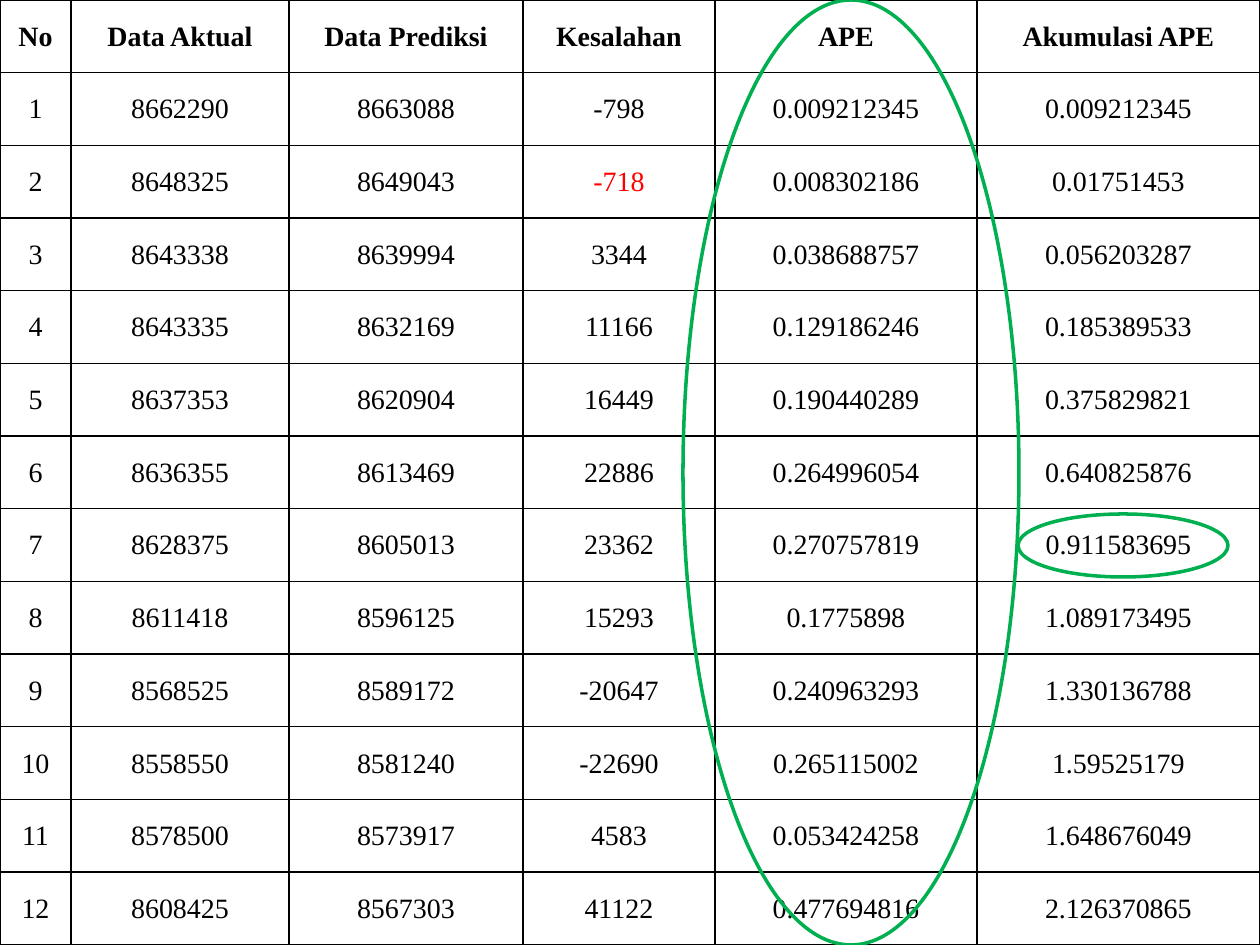
from dataclasses import dataclass

from lxml.etree import SubElement
from pptx import Presentation
from pptx.dml.color import RGBColor
from pptx.enum.shapes import MSO_SHAPE as Shape
from pptx.enum.text import MSO_ANCHOR as Anchor, PP_ALIGN as Align
from pptx.oxml.ns import qn
from pptx.util import Emu, Pt

PX = 914400 / 126
SLIDE_WIDTH, SLIDE_HEIGHT = 1260, 945


@dataclass(frozen=True)
class Theme:
    font: str = "Times New Roman"
    text_size: int = 16
    text: str = "000000"
    negative: str = "FF0000"
    border: str = "000000"
    border_width: int = 1
    highlight: str = "00B050"
    highlight_width: int = 2


THEME = Theme()
COLUMN_WIDTHS = [71, 218, 234, 192, 262, 283]
HEADERS = ["No", "Data Aktual", "Data Prediksi", "Kesalahan", "APE", "Akumulasi APE"]
FORECASTS = [
    ("8662290", "8663088", "-798", "0.009212345", "0.009212345"),
    ("8648325", "8649043", "-718", "0.008302186", "0.01751453"),
    ("8643338", "8639994", "3344", "0.038688757", "0.056203287"),
    ("8643335", "8632169", "11166", "0.129186246", "0.185389533"),
    ("8637353", "8620904", "16449", "0.190440289", "0.375829821"),
    ("8636355", "8613469", "22886", "0.264996054", "0.640825876"),
    ("8628375", "8605013", "23362", "0.270757819", "0.911583695"),
    ("8611418", "8596125", "15293", "0.1775898", "1.089173495"),
    ("8568525", "8589172", "-20647", "0.240963293", "1.330136788"),
    ("8558550", "8581240", "-22690", "0.265115002", "1.59525179"),
    ("8578500", "8573917", "4583", "0.053424258", "1.648676049"),
    ("8608425", "8567303", "41122", "0.477694816", "2.126370865"),
]
RED_CELL = (2, 3)
APE_COLUMN_RING = (683, 0, 336, 945)
ACCUMULATED_RING = (1018, 514, 210, 63)


def px(length):
    return Emu(round(length * PX))


def add_borders(cell):
    properties = cell._tc.get_or_add_tcPr()
    for position, side in enumerate(("lnL", "lnR", "lnT", "lnB")):
        line = SubElement(properties, qn(f"a:{side}"), w=str(Pt(THEME.border_width)))
        fill = SubElement(line, qn("a:solidFill"))
        SubElement(fill, qn("a:srgbClr"), val=THEME.border)
        properties.insert(position, line)


def fill_cell(cell, text, color, bold):
    cell.fill.background()
    cell.vertical_anchor = Anchor.MIDDLE
    cell.margin_left = cell.margin_right = cell.margin_top = px(1)
    cell.margin_bottom = 0
    cell.text_frame.text = text
    paragraph = cell.text_frame.paragraphs[0]
    paragraph.alignment = Align.CENTER
    font = paragraph.runs[0].font
    font.name = THEME.font
    font.size = Pt(THEME.text_size)
    font.bold = bold
    font.color.rgb = RGBColor.from_string(color)
    add_borders(cell)


def add_forecast_table(slide):
    rows = [HEADERS]
    rows += [(str(number), *values) for number, values in enumerate(FORECASTS, 1)]
    table = slide.shapes.add_table(
        len(rows), len(HEADERS), 0, 0, px(SLIDE_WIDTH), px(SLIDE_HEIGHT)
    ).table
    table.first_row = table.horz_banding = False
    for column, width in zip(table.columns, COLUMN_WIDTHS):
        column.width = px(width)
    for row_index, values in enumerate(rows):
        for column_index, text in enumerate(values):
            is_red = (row_index, column_index) == RED_CELL
            color = THEME.negative if is_red else THEME.text
            fill_cell(table.cell(row_index, column_index), text, color, row_index == 0)


def add_ring(slide, bounds):
    shape = slide.shapes.add_shape(Shape.OVAL, *map(px, bounds))
    shape.shadow.inherit = False
    shape.fill.background()
    shape.line.color.rgb = RGBColor.from_string(THEME.highlight)
    shape.line.width = Pt(THEME.highlight_width)


def main():
    presentation = Presentation()
    presentation.slide_width = px(SLIDE_WIDTH)
    presentation.slide_height = px(SLIDE_HEIGHT)
    slide = presentation.slides.add_slide(presentation.slide_layouts[6])
    add_forecast_table(slide)
    for bounds in (APE_COLUMN_RING, ACCUMULATED_RING):
        add_ring(slide, bounds)
    presentation.save("out.pptx")


if __name__ == "__main__":
    main()
